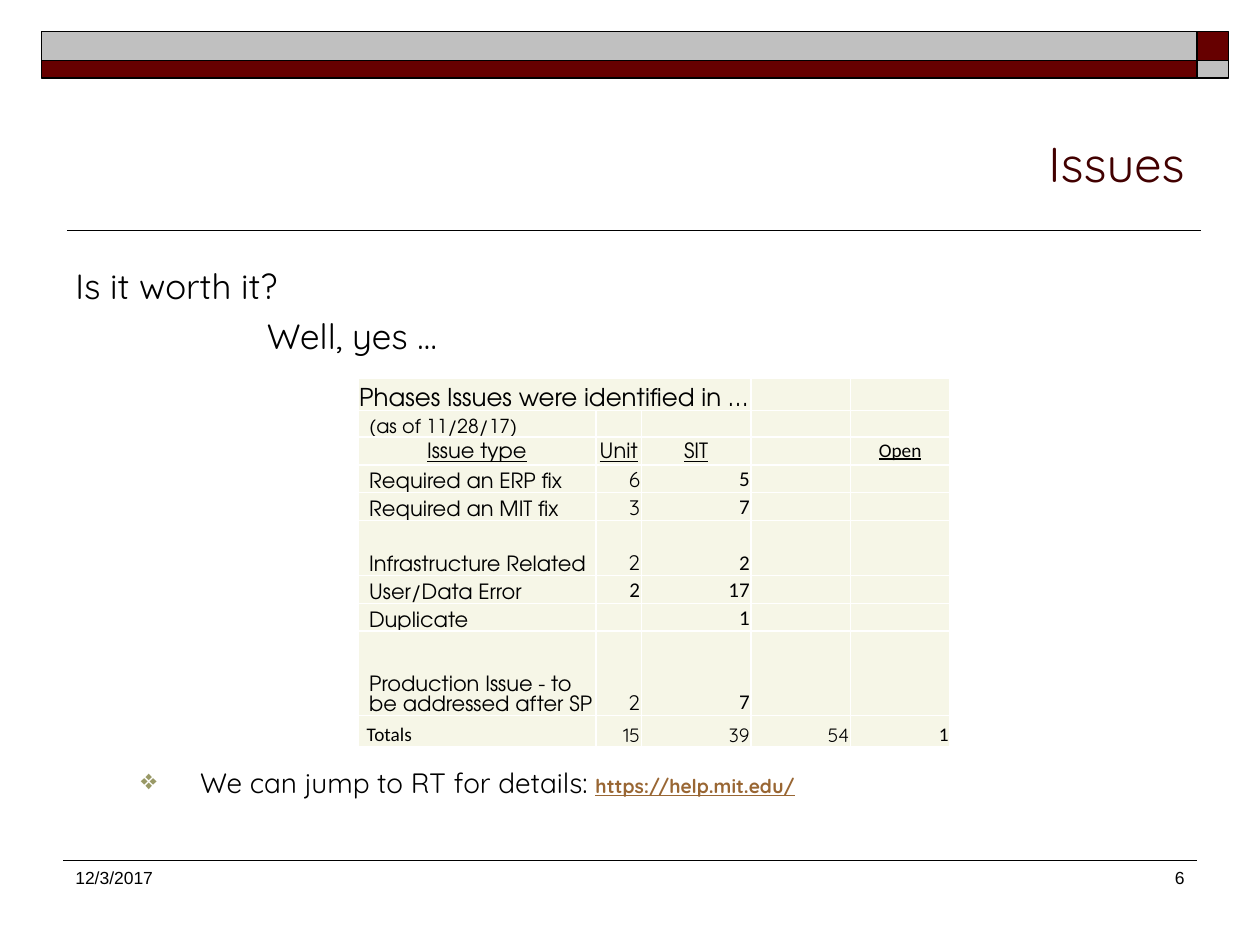
from lxml.etree import SubElement
from pptx import Presentation
from pptx.dml.color import RGBColor
from pptx.enum.shapes import MSO_CONNECTOR, MSO_SHAPE
from pptx.enum.text import MSO_ANCHOR, PP_ALIGN
from pptx.oxml.ns import qn
from pptx.util import Inches, Pt

# Content
TITLE, DATE, NUMBER = "Issues", "12/3/2017", "6"
QUESTION, ANSWER = "Is it worth it?", "Well, yes …"
DETAILS, ADDRESS = "We can jump to RT for details: ", "https://help.mit.edu/"
ROWS = [  # height, cell texts
    (0.26, ["Phases Issues were identified in …", "", "", "", ""]),
    (0.21, ["(as of 11/28/17)", "", "", "", ""]),
    (0.22, ["Issue type", "Unit", "SIT", "", "Open"]),
    (0.22, ["Required an ERP fix", "6", "5", "", ""]),
    (0.22, ["Required an MIT fix", "3", "7", "", ""]),
    (0.44, ["Infrastructure Related", "2", "2", "", ""]),
    (0.22, ["User/Data Error", "2", "17", "", ""]),
    (0.22, ["Duplicate", "", "1", "", ""]),
    (0.67, ["Production Issue - to be addressed after SP", "2", "7", "", ""]),
    (0.25, ["Totals", "15", "39", "54", "1"]),
]
COLS = [1.89, 0.36, 0.87, 0.79, 0.79]
HEAD, LAST = 2, len(ROWS) - 1
SIZES = {0: 14, 1: 11, LAST: 11}
CALIBRI = {(HEAD, 4), (6, 1), (LAST, 0), (LAST, 4)} | {(r, 2) for r in range(HEAD + 1, LAST)}

BODY_FONT, TABLE_FONT = "Quicksand", "TeX Gyre Adventor"
MAROON, GREY, CREAM, BLACK = "660000", "C0C0C0", "F6F6E7", "000000"

prs = Presentation()
prs.slide_width, prs.slide_height = Inches(10), Inches(7.5)
s = prs.slides.add_slide(prs.slide_layouts[6])


def color(value):
    return RGBColor.from_string(value)


def add_run(p, text, size, font=BODY_FONT, c=BLACK, bold=False, underline=False):
    r = p.add_run()
    r.text = text
    r.font.size, r.font.name = Pt(size), font
    r.font.bold, r.font.underline = bold, underline
    r.font.color.rgb = color(c)


def add_box(x, y, w, h, anchor=MSO_ANCHOR.TOP):
    tf = s.shapes.add_textbox(Inches(x), Inches(y), Inches(w), Inches(h)).text_frame
    tf.word_wrap, tf.vertical_anchor = True, anchor
    return tf


def add_label(text, x, y, w, h, size, align=PP_ALIGN.LEFT, anchor=MSO_ANCHOR.TOP, **fmt):
    p = add_box(x, y, w, h, anchor).paragraphs[0]
    p.alignment = align
    add_run(p, text, size, **fmt)


def add_rule(x1, x2, y, width):
    line = s.shapes.add_connector(
        MSO_CONNECTOR.STRAIGHT, Inches(x1), Inches(y), Inches(x2), Inches(y))
    line.line.color.rgb, line.line.width = color(BLACK), Pt(width)
    SubElement(line._element.spPr, qn("a:effectLst"))


def style_cell(cell):
    tcPr = cell._tc.get_or_add_tcPr()
    for side in ("lnL", "lnR", "lnT", "lnB"):
        ln = SubElement(tcPr, qn(f"a:{side}"), w=str(Pt(1)))
        SubElement(SubElement(ln, qn("a:solidFill")), qn("a:srgbClr"), val="FFFFFF")
    cell.fill.solid()
    cell.fill.fore_color.rgb = color(CREAM)
    cell.vertical_anchor = MSO_ANCHOR.BOTTOM
    cell.margin_left = cell.margin_right = cell.margin_top = Inches(0.01)
    cell.margin_bottom = 0


# Header band: two rows of a wide and a narrow block
for y, h, fills in [(0.25, 0.23, (GREY, MAROON)), (0.48, 0.14, (MAROON, GREY))]:
    for x, w, fill in zip((0.33, 9.5), (9.17, 0.25), fills):
        sp = s.shapes.add_shape(MSO_SHAPE.RECTANGLE, Inches(x), Inches(y), Inches(w), Inches(h))
        sp.shadow.inherit = False
        sp.fill.solid()
        sp.fill.fore_color.rgb = color(fill)
        sp.line.color.rgb, sp.line.width = color(BLACK), Pt(1)

# Rules, title and footer
add_rule(0.53, 9.53, 1.83, 1)
add_rule(0.5, 9.5, 6.83, 0.75)
add_label(TITLE, 0.5, 0.58, 9, 1, 28, PP_ALIGN.RIGHT, MSO_ANCHOR.BOTTOM, c="420000")
add_label(DATE, 0.5, 6.83, 1.83, 0.5, 10, font="Arial")
add_label(NUMBER, 7.42, 6.83, 2.08, 0.5, 10, PP_ALIGN.RIGHT, font="Arial")

# Body text, with room for the table before the last paragraph
tf = add_box(0.5, 2.05, 9, 4.7)
add_run(tf.paragraphs[0], QUESTION, 20)

p = tf.add_paragraph()
p.space_before = Pt(4.5)
p._p.get_or_add_pPr().set("marL", str(Inches(1.52)))
add_run(p, ANSWER, 20)

p = tf.add_paragraph()
p.space_before, p.line_spacing = Pt(236), 0.9
pPr = p._p.get_or_add_pPr()
pPr.set("marL", str(Inches(0.99)))
pPr.set("indent", str(Inches(-0.47)))
SubElement(SubElement(pPr, qn("a:buClr")), qn("a:srgbClr"), val="999966")
SubElement(pPr, qn("a:buSzPct"), val="100000")
SubElement(pPr, qn("a:buChar"), char="❖")
add_run(p, DETAILS, 16)
add_run(p, ADDRESS, 11, c="996633", bold=True, underline=True)

# Issue table
heights = [h for h, _ in ROWS]
frame = s.shapes.add_table(len(ROWS), len(COLS), Inches(2.84), Inches(3),
                           Inches(sum(COLS)), Inches(sum(heights)))
table = frame.table
table.first_row = table.horz_banding = False
for col, w in zip(table.columns, COLS):
    col.width = Inches(w)
for i, (h, texts) in enumerate(ROWS):
    table.rows[i].height = Inches(h)
    for j, text in enumerate(texts):
        cell = table.cell(i, j)
        style_cell(cell)
        p = cell.text_frame.paragraphs[0]
        if not text:
            SubElement(p._p, qn("a:endParaRPr"), sz="1000")
            continue
        if i == HEAD:
            p.alignment = PP_ALIGN.CENTER
            cell.margin_top, cell.margin_bottom = 0, Inches(0.02)
        elif j:
            p.alignment = PP_ALIGN.RIGHT
        elif i:
            cell.margin_left = Inches(0.07 if i == LAST else 0.09)
        else:
            cell.margin_right = 0
        font = TABLE_FONT if j == 0 or i == HEAD else BODY_FONT
        if (i, j) in CALIBRI:
            font = "Calibri"
        size = 11 if (i, j) == (HEAD, 4) else SIZES.get(i, 12)
        add_run(p, text, size, font=font, underline=i == HEAD)
table.cell(0, 0).merge(table.cell(0, 2))

prs.save("out.pptx")
